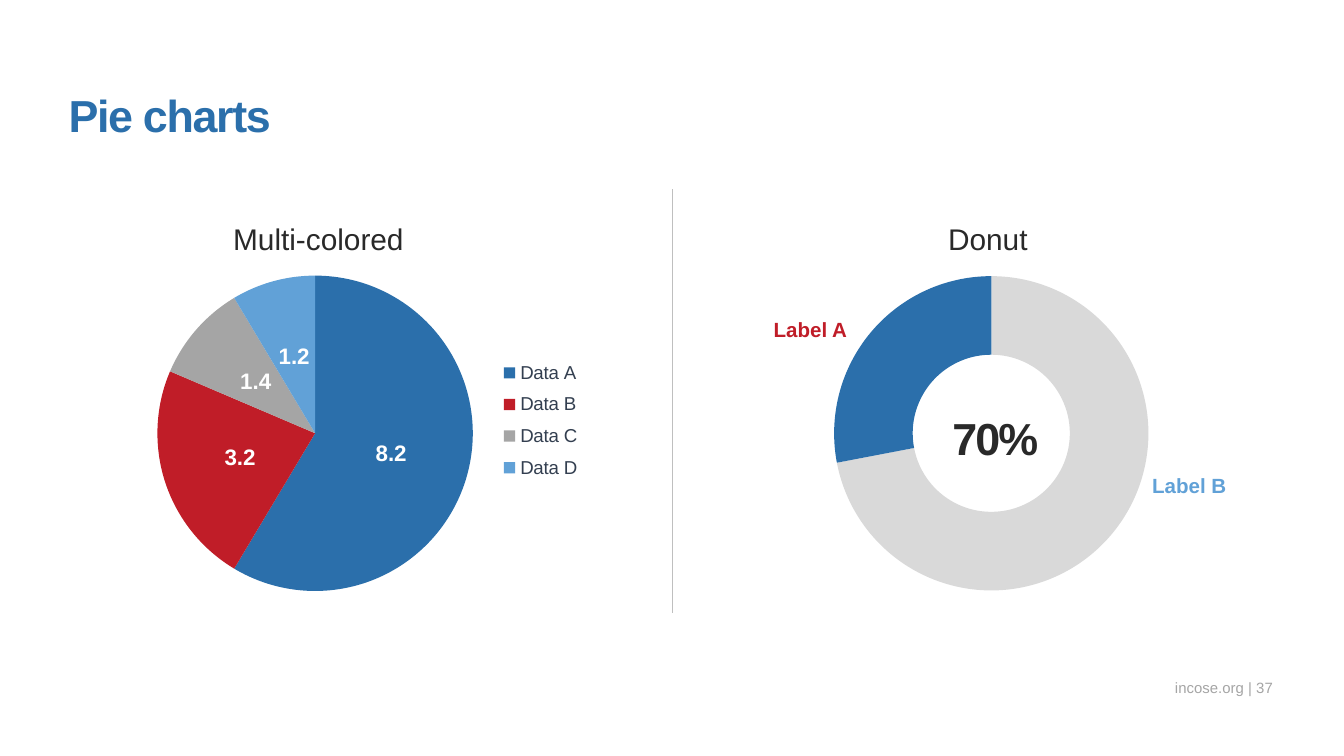
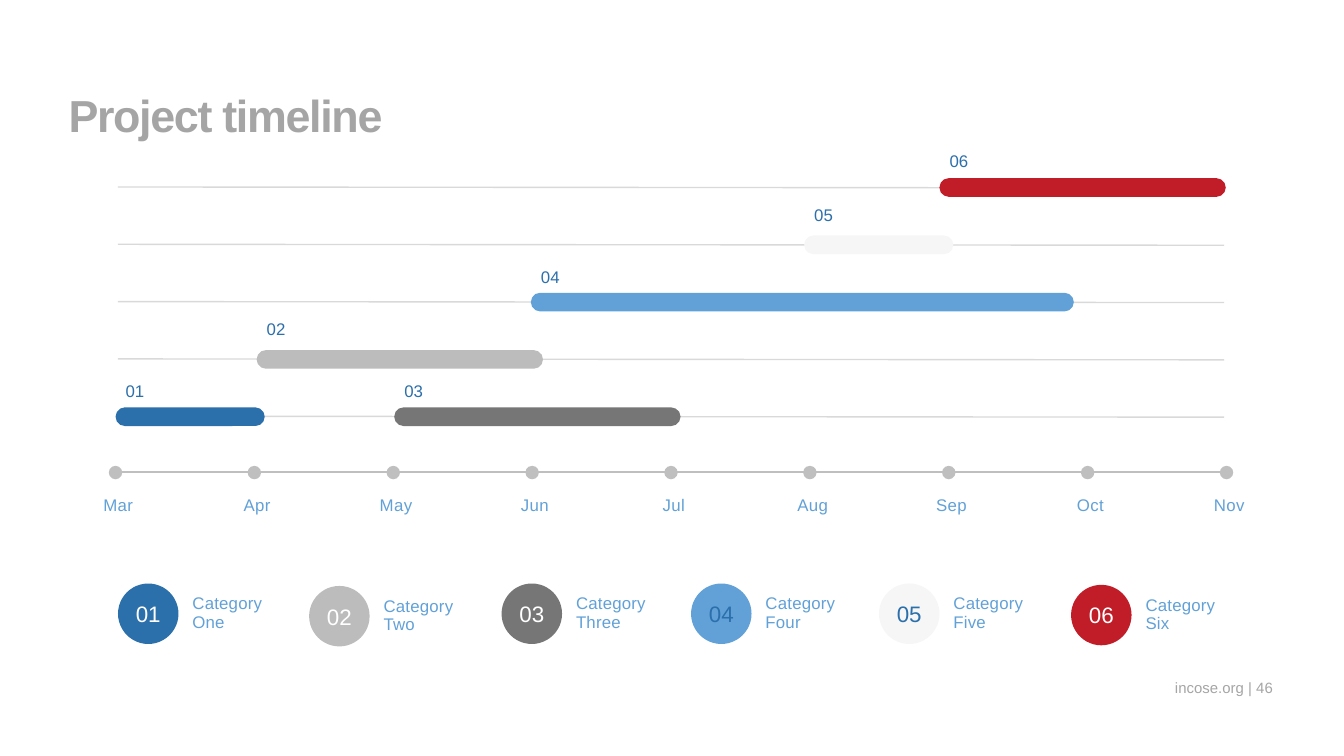
from dataclasses import dataclass

from lxml.etree import SubElement
from pptx import Presentation
from pptx.chart.data import CategoryChartData
from pptx.dml.color import RGBColor
from pptx.enum.chart import XL_CHART_TYPE as ChartType
from pptx.enum.chart import XL_LABEL_POSITION as LabelPosition
from pptx.enum.chart import XL_LEGEND_POSITION as LegendPosition
from pptx.enum.shapes import MSO_CONNECTOR as Connector
from pptx.enum.shapes import MSO_SHAPE as Preset
from pptx.enum.text import MSO_ANCHOR as Anchor
from pptx.enum.text import PP_ALIGN as Align
from pptx.oxml.ns import qn
from pptx.util import Pt


@dataclass(frozen=True)
class Theme:
    font: str = "Arial"
    blue: str = "2B6FAB"
    sky: str = "61A1D7"
    red: str = "C01D28"
    white: str = "FFFFFF"
    ink: str = "292929"
    slate: str = "333F50"
    gray: str = "A5A5A5"
    dark_gray: str = "767676"
    mid_gray: str = "BCBCBC"
    axis: str = "BFBFBF"
    grid: str = "D9D9D9"
    pale: str = "F6F6F6"
    title: int = 24
    heading: int = 16
    number: int = 12
    label: int = 11
    legend: int = 10
    small: int = 9
    footer: int = 8


THEME = Theme()
DEFAULT_INSETS = (7.2, 3.6)


def rgb(colour):
    return RGBColor.from_string(colour)


def set_layout(parent, index, frame):
    """Place a plot area or a legend by fractions of its chart."""
    for old in parent.findall(qn("c:layout")):
        parent.remove(old)
    layout = SubElement(parent, qn("c:layout"))
    parent.insert(index, layout)
    manual = SubElement(layout, qn("c:manualLayout"))
    if parent.tag == qn("c:plotArea"):
        SubElement(manual, qn("c:layoutTarget"), val="inner")
    for side in "xy":
        SubElement(manual, qn(f"c:{side}Mode"), val="edge")
    for key, value in zip("xywh", frame):
        SubElement(manual, qn(f"c:{key}"), val=str(value))


class SlideBuilder:
    """Holds the theme and the current page; draws each kind of element."""

    def __init__(self, deck, theme):
        self.deck = deck
        self.theme = theme
        self.page = None

    def start(self, title, colour, number):
        theme = self.theme
        self.page = self.deck.slides.add_slide(self.deck.slide_layouts[6])
        self.text((603, 359.3, 79, 13.7), f"incose.org | {number}", theme.footer,
                  theme.gray, align=Align.RIGHT, anchor=Anchor.BOTTOM, leading=1.5)
        self.text((36.7, 46.8, 647.3, 28.8), title, theme.title, colour,
                  bold=True, align=Align.LEFT, tracking=-0.7)

    def fill_text(self, shape, text, size, colour, bold=False, align=Align.CENTER,
                  anchor=Anchor.TOP, insets=(0, 0), leading=None, tracking=None):
        frame = shape.text_frame
        frame.word_wrap = True
        frame.vertical_anchor = anchor
        frame.margin_left = frame.margin_right = Pt(insets[0])
        frame.margin_top = frame.margin_bottom = Pt(insets[1])
        para = frame.paragraphs[0]
        para.alignment = align
        if leading:
            para.line_spacing = leading
        for index, line in enumerate(text.split("\n")):
            if index:
                para.add_line_break()
            span = para.add_run()
            span.text = line
            font = span.font
            font.name, font.size, font.bold = self.theme.font, Pt(size), bold
            font.color.rgb = rgb(colour)
            if tracking:
                font._element.set("spc", str(round(tracking * 100)))

    def text(self, place, text, size, colour, **style):
        box = self.page.shapes.add_textbox(*map(Pt, place))
        self.fill_text(box, text, size, colour, **style)

    def shape(self, preset, place, fill):
        shape = self.page.shapes.add_shape(preset, *map(Pt, place))
        shape.shadow.inherit = False
        shape.fill.solid()
        shape.fill.fore_color.rgb = rgb(fill)
        shape.line.fill.background()
        return shape

    def bar(self, place, fill):
        self.shape(Preset.ROUNDED_RECTANGLE, place, fill).adjustments[0] = 0.5

    def circle(self, left, top, size, fill):
        return self.shape(Preset.OVAL, (left, top, size, size), fill)

    def line(self, start, end, colour, width):
        line = self.page.shapes.add_connector(
            Connector.STRAIGHT, *map(Pt, (*start, *end)))
        line.line.color.rgb = rgb(colour)
        line.line.width = Pt(width)
        SubElement(line._element.spPr, qn("a:effectLst"))

    def chart(self, kind, place, categories, values, colours):
        data = CategoryChartData(number_format="General")
        data.categories = categories
        data.add_series("Series 1", values)
        chart = self.page.shapes.add_chart(kind, *map(Pt, place), data).chart
        chart.has_title = chart.has_legend = False
        chart.font.name, chart.font.size = self.theme.font, Pt(18)
        chart.font.color.rgb = rgb("000000")
        plot = chart.plots[0]
        plot.vary_by_categories = True
        for index, colour in enumerate(colours):
            style = plot.series[0].points[index].format
            style.fill.solid()
            style.fill.fore_color.rgb = rgb(colour)
            style.line.fill.background()
        plot_area = chart._chartSpace.find(".//" + qn("c:plotArea"))
        set_layout(plot_area, 0, (0.052, 0.148, 0.692, 0.804))
        return chart

    def value_labels(self, chart):
        plot = chart.plots[0]
        plot.has_data_labels = True
        labels = plot.data_labels
        labels.show_value = True
        labels.show_percentage = False
        labels.position = LabelPosition.CENTER
        font = labels.font
        font.name, font.size, font.bold = self.theme.font, Pt(self.theme.number), True
        font.color.rgb = rgb(self.theme.white)

    def legend(self, chart, frame):
        chart.has_legend = True
        legend = chart.legend
        legend.position = LegendPosition.RIGHT
        legend.include_in_layout = True
        legend.font.name, legend.font.size = self.theme.font, Pt(self.theme.legend)
        legend.font.color.rgb = rgb(self.theme.slate)
        set_layout(legend._element, 1, frame)


def pie_charts(draw):
    theme = draw.theme
    draw.start("Pie charts", theme.blue, 37)

    # Pie with legend
    pie = draw.chart(ChartType.PIE, (64.8, 116.6, 261.4, 210.2),
                     [f"Data {letter}" for letter in "ABCD"], (8.2, 3.2, 1.4, 1.2),
                     (theme.blue, theme.red, theme.gray, theme.sky))
    draw.value_labels(pie)
    draw.legend(pie, (0.765, 0.342, 0.19, 0.35))

    # Donut
    donut = draw.chart(ChartType.DOUGHNUT, (434.2, 116.6, 243.4, 210.2),
                       ("1", "2"), (72, 28), (theme.grid, theme.blue))
    donut._chartSpace.find(".//" + qn("c:holeSize")).set("val", "70")
    draw.text((477.4, 223.9, 111.6, 28.1), "70%", theme.title, theme.ink, bold=True,
              anchor=Anchor.MIDDLE, insets=DEFAULT_INSETS, leading=0.7, tracking=-1)
    for left, top, width, label, colour in (
            (407.5, 169.9, 53.3, "Label A", theme.red),
            (613.4, 253.4, 47.5, "Label B", theme.sky)):
        draw.text((left, top, width, 13.7), label, theme.label, colour, bold=True)

    # Headings and divider
    for left, heading in ((101.5, "Multi-colored"), (460.1, "Donut")):
        draw.text((left, 118.1, 138.2, 19.4), heading, theme.heading, theme.ink)
    draw.line((360.5, 101.5), (360.5, 328.3), theme.axis, 0.5)


@dataclass(frozen=True)
class Category:
    name: str
    fill: str
    ink: str
    row: int
    bar_left: float
    bar_width: float
    label_top: float
    key_left: float
    key_top: float


CATEGORIES = (
    Category("One", THEME.blue, THEME.white, 4, 61.9, 79.9, 193, 63.2, 312.6),
    Category("Two", THEME.mid_gray, THEME.white, 3, 137.5, 153.4, 159.8, 165.6, 313.9),
    Category("Three", THEME.dark_gray, THEME.white, 4, 211.2, 153.4, 193, 268.7, 312.6),
    Category("Four", THEME.sky, THEME.blue, 2, 284.4, 290.9, 131.8, 370.2, 312.6),
    Category("Five", THEME.pale, THEME.blue, 1, 430.8, 79.9, 98.8, 470.9, 312.6),
    Category("Six", THEME.red, THEME.white, 0, 503.3, 153.4, 69.7, 573.8, 313.3),
)
MONTHS = "Mar Apr May Jun Jul Aug Sep Oct Nov".split()
ROWS, ROW_TOP, ROW_STEP = 5, 100.2, 30.7
MONTH_LEFT, MONTH_STEP = 61.9, 74.4
AXIS_Y = 252.8
AXIS_LEFT, AXIS_RIGHT = 63.2, 655.8
KEY_SIZE, BAR_HEIGHT, DOT_SIZE = 32.4, 10, 7.2


def project_timeline(draw):
    theme = draw.theme
    draw.start("Project timeline", theme.gray, 46)

    # Row guides
    for row in range(ROWS):
        y = ROW_TOP + row * ROW_STEP
        draw.line((AXIS_LEFT, y), (AXIS_RIGHT, y + 0.5), theme.grid, 0.75)

    # Bars and their key
    for order, item in enumerate(CATEGORIES, 1):
        number = f"{order:02d}"
        bar_top = ROW_TOP + item.row * ROW_STEP + 0.25 - BAR_HEIGHT / 2
        draw.bar((item.bar_left, bar_top, item.bar_width, BAR_HEIGHT), item.fill)
        draw.text((item.bar_left - 5.8, item.label_top, KEY_SIZE, KEY_SIZE), number,
                  theme.small, theme.blue, anchor=Anchor.MIDDLE)
        disc = draw.circle(item.key_left, item.key_top, KEY_SIZE, item.fill)
        draw.fill_text(disc, number, theme.number, item.ink, anchor=Anchor.MIDDLE)
        draw.text((item.key_left + 32.8, item.key_top + 2.8, 59, 26.6),
                  f"Category\n{item.name}", theme.small, theme.sky, align=Align.LEFT,
                  insets=DEFAULT_INSETS, leading=0.9, tracking=0.1)

    # Month axis
    draw.line((AXIS_LEFT, AXIS_Y), (AXIS_RIGHT, AXIS_Y), theme.axis, 1)
    for index, month in enumerate(MONTHS):
        x = MONTH_LEFT + index * MONTH_STEP
        draw.circle(x - DOT_SIZE / 2, AXIS_Y + 0.4 - DOT_SIZE / 2, DOT_SIZE, theme.axis)
        draw.text((x - 18, 262.8, 38.9, 17.3), month, theme.small, theme.sky,
                  insets=DEFAULT_INSETS, leading=0.9, tracking=0.2)


def main():
    deck = Presentation()
    deck.slide_width, deck.slide_height = Pt(720), Pt(405)
    draw = SlideBuilder(deck, THEME)
    pie_charts(draw)
    project_timeline(draw)
    deck.save("out.pptx")


if __name__ == "__main__":
    main()
